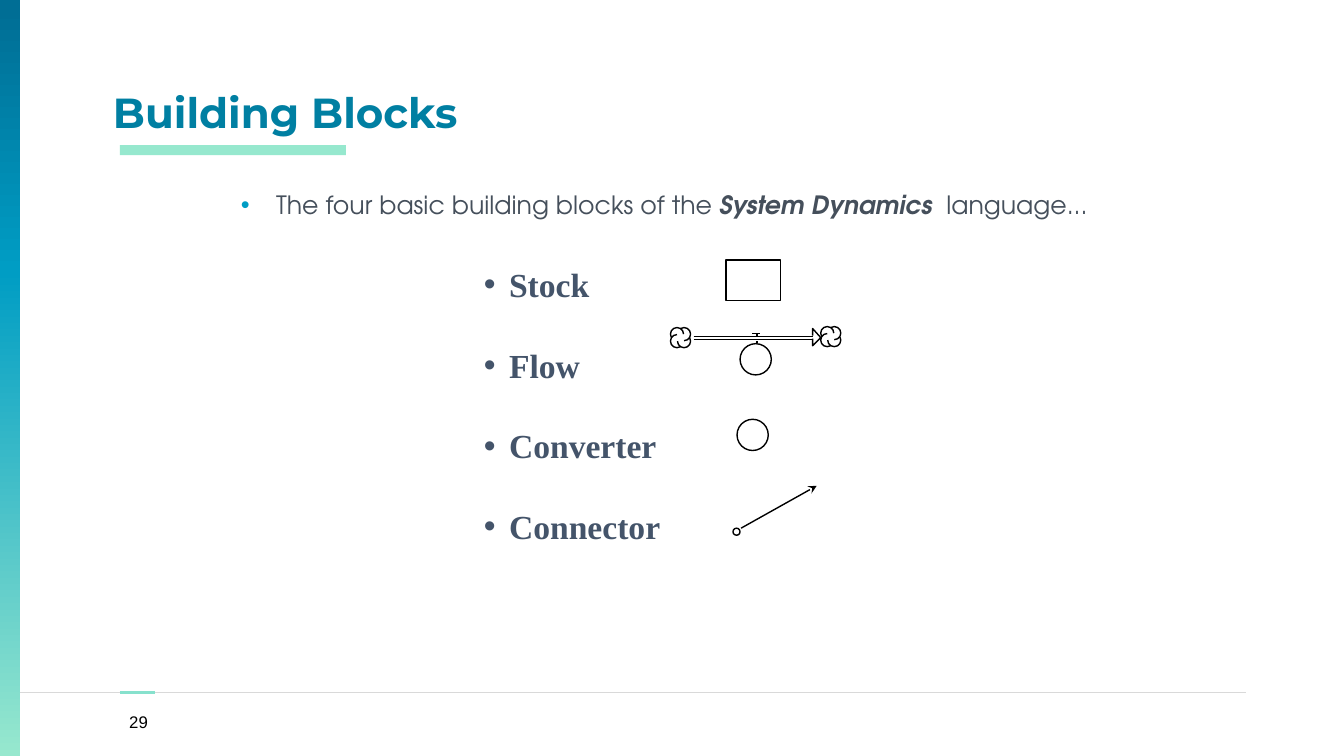
from copy import deepcopy
from dataclasses import dataclass

from lxml.etree import SubElement
from pptx import Presentation
from pptx.dml.color import RGBColor
from pptx.enum.shapes import MSO_CONNECTOR, MSO_SHAPE
from pptx.enum.text import MSO_ANCHOR, PP_ALIGN
from pptx.oxml.ns import qn
from pptx.util import Inches, Pt


@dataclass
class Theme:
    title: RGBColor = RGBColor.from_string("007FA2")
    body: RGBColor = RGBColor.from_string("454F5B")
    blocks: RGBColor = RGBColor.from_string("44546A")
    ink: RGBColor = RGBColor.from_string("000000")
    rule: RGBColor = RGBColor.from_string("D9D9D9")
    rule_accent: RGBColor = RGBColor.from_string("87E1CD")
    underline: RGBColor = RGBColor.from_string("96E8CE")
    bullet: str = "009DC4"
    sidebar: tuple = ((0, "97E8CE"), (0.64, "009DC4"), (0.99, "006E95"))
    title_size: Pt = Pt(30)
    block_size: Pt = Pt(24)
    body_size: Pt = Pt(18)
    number_size: Pt = Pt(12)


theme = Theme()
prs = Presentation()
prs.slide_width, prs.slide_height = Inches(13.33), Inches(7.5)
slide = prs.slides.add_slide(prs.slide_layouts[5])
shapes = slide.shapes


def add_line(x1, y1, x2, y2, color=theme.ink, width=1):
    line = shapes.add_connector(
        MSO_CONNECTOR.STRAIGHT, Inches(x1), Inches(y1), Inches(x2), Inches(y2))
    line.line.color.rgb = color
    line.line.width = Pt(width)
    SubElement(line._element.spPr, qn("a:effectLst"))
    return line


def add_bullet(paragraph, indent, hanging, color=None):
    props = paragraph._p.get_or_add_pPr()
    props.set("marL", str(Inches(indent)))
    props.set("indent", str(-Inches(hanging)))
    if color:
        SubElement(SubElement(props, qn("a:buClr")), qn("a:srgbClr"), val=color)
    SubElement(props, qn("a:buFont"), typeface="Arial")
    SubElement(props, qn("a:buChar"), char="•")


add_line(0, 6.87, 12.36, 6.87, theme.rule, 0.75)
add_line(1.19, 6.87, 1.54, 6.87, theme.rule_accent, 2.75)

sidebar = shapes.add_shape(MSO_SHAPE.RECTANGLE, 0, 0, Inches(0.2), Inches(7.5))
sidebar.shadow.inherit = False
sidebar.line.fill.background()
sidebar.fill.gradient()
sidebar.fill.gradient_angle = 90
first_stop = sidebar._element.xpath(".//a:gs")[0]
first_stop.addnext(deepcopy(first_stop))
for stop, (position, color) in zip(sidebar.fill.gradient_stops, theme.sidebar):
    stop.position = position
    stop.color.rgb = RGBColor.from_string(color)

underline = shapes.add_shape(
    MSO_SHAPE.RECTANGLE, Inches(1.19), Inches(1.44), Inches(2.24), Inches(0.1))
underline.shadow.inherit = False
underline.fill.solid()
underline.fill.fore_color.rgb = theme.underline
underline.line.fill.background()

title = shapes.title
title.left, title.top = Inches(1.02), Inches(0)
title.width, title.height = Inches(11.39), Inches(1.41)
title.text_frame.text = "Building Blocks"
title.text_frame.vertical_anchor = MSO_ANCHOR.BOTTOM
heading = title.text_frame.paragraphs[0]
heading.alignment = PP_ALIGN.LEFT
heading.line_spacing = 0.8
heading.font.name = "Montserrat"
heading.font.size = theme.title_size
heading.font.bold = True
heading.font.color.rgb = theme.title

intro = shapes.add_textbox(Inches(2.17), Inches(1.77), Inches(9.17), Inches(0.73))
intro.text_frame.word_wrap = True
sentence = intro.text_frame.paragraphs[0]
add_bullet(sentence, 0.47, 0.35, theme.bullet)
sentence.line_spacing = 1.2
sentence.space_before = Pt(6)
sentence.font.name = "TeX Gyre Adventor"
sentence.font.size = theme.body_size
sentence.font.color.rgb = theme.body
for words, emphasis in (
        ("The four basic building blocks of the ", False),
        ("System Dynamics", True),
        ("  language...", False)):
    run = sentence.add_run()
    run.text = words
    run.font.bold = run.font.italic = emphasis

for preset, left, top, width, height in (
        (MSO_SHAPE.RECTANGLE, 7.2, 2.58, 0.54, 0.4),
        (MSO_SHAPE.OVAL, 7.34, 3.41, 0.31, 0.31),
        (MSO_SHAPE.OVAL, 7.31, 4.16, 0.31, 0.31),
        (MSO_SHAPE.OVAL, 7.27, 5.24, 0.07, 0.07)):
    symbol = shapes.add_shape(
        preset, Inches(left), Inches(top), Inches(width), Inches(height))
    symbol.shadow.inherit = False
    symbol.fill.background()
    symbol.line.color.rgb = theme.ink
    symbol.line.width = Pt(1)

lobe_offsets = ((0, 0), (0.07, 0), (0.07, 0.07), (0, 0.07))
for cloud_left, cloud_top in ((6.65, 3.25), (8.14, 3.24)):
    for quarter, (dx, dy) in enumerate(lobe_offsets):
        lobe = shapes.add_shape(
            MSO_SHAPE.ARC, Inches(cloud_left + dx), Inches(cloud_top + dy),
            Inches(0.13), Inches(0.13))
        lobe.shadow.inherit = False
        lobe.adjustments[0] = (150 + 90 * quarter) % 360 * 0.6
        lobe.adjustments[1] = 90 * quarter * 0.6
        lobe.fill.background()
        lobe.line.color.rgb = theme.ink
        lobe.line.width = Pt(1)

for ends in (
        (6.88, 3.34, 8.06, 3.34),
        (6.88, 3.37, 8.06, 3.37),
        (7.51, 3.4, 7.51, 3.38),
        (7.51, 3.33, 7.51, 3.31),
        (7.46, 3.31, 7.54, 3.31)):
    add_line(*ends)

outline = shapes.build_freeform(Inches(8.06), Inches(3.33))
outline.add_line_segments(
    [(Inches(x), Inches(y))
     for x, y in ((8.06, 3.26), (8.14, 3.35), (8.06, 3.43), (8.06, 3.36))],
    close=False)
flow_head = outline.convert_to_shape()
flow_head.shadow.inherit = False
flow_head.fill.background()
flow_head.line.color.rgb = theme.ink
flow_head.line.width = Pt(1)

connector = add_line(7.35, 5.24, 8.1, 4.82)
SubElement(connector._element.xpath(".//a:ln")[0], qn("a:tailEnd"), type="stealth")

blocks = shapes.add_textbox(Inches(4.7), Inches(2.17), Inches(1.95), Inches(3.3))
blocks.text_frame.word_wrap = False
blocks.text_frame.text = "Stock\nFlow\nConverter\nConnector"
for block in blocks.text_frame.paragraphs:
    add_bullet(block, 0.25, 0.25)
    block.line_spacing = 2.0
    block.font.name = "Times New Roman"
    block.font.size = theme.block_size
    block.font.bold = True
    block.font.color.rgb = theme.blocks

page = shapes.add_textbox(Inches(1.11), Inches(6.96), Inches(0.53), Inches(0.4))
page.text_frame.text = "29"
page.text_frame.vertical_anchor = MSO_ANCHOR.MIDDLE
number = page.text_frame.paragraphs[0]
number.alignment = PP_ALIGN.CENTER
number.font.name = "Arial"
number.font.size = theme.number_size
number.font.color.rgb = theme.ink

prs.save("out.pptx")
